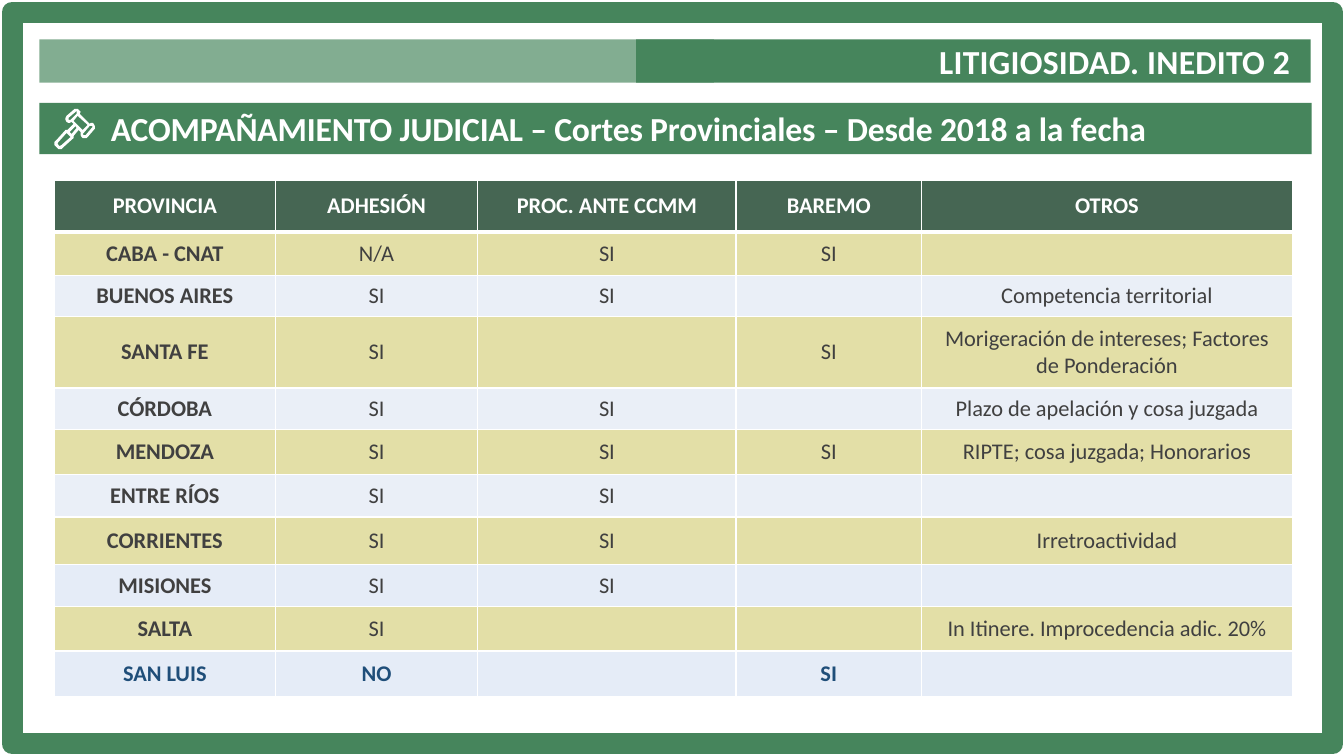
from lxml.etree import SubElement
from pptx import Presentation
from pptx.dml.color import RGBColor
from pptx.enum.shapes import MSO_SHAPE as Preset
from pptx.enum.text import MSO_ANCHOR as Anchor, PP_ALIGN as Align
from pptx.oxml.ns import qn
from pptx.util import Inches, Pt

GREEN = RGBColor(0x46, 0x85, 0x5C)
DARK_GREEN = RGBColor(0x46, 0x66, 0x53)
SAND = RGBColor(0xE3, 0xDF, 0xA7)
ICE = RGBColor(0xEA, 0xEF, 0xF7)
PALE_BLUE = RGBColor(0xE5, 0xEC, 0xF7)
NAVY = RGBColor(0x1F, 0x4E, 0x79)
GRAY = RGBColor(0x40, 0x40, 0x40)
WHITE = RGBColor(0xFF, 0xFF, 0xFF)

presentation = Presentation()
presentation.slide_width, presentation.slide_height = Inches(13.33), Inches(7.5)
slide = presentation.slides.add_slide(presentation.slide_layouts[6])


def add_text(frame, text, size, color, bold=True, align=Align.CENTER, spacing=0):
    paragraph = frame.paragraphs[0]
    paragraph.alignment = align
    run = paragraph.add_run()
    run.text = text
    run.font.name, run.font.size = "Calibri", Pt(size)
    run.font.bold, run.font.color.rgb = bold, color
    if spacing:  # hundredths of a point
        run._r.get_or_add_rPr().set("spc", str(spacing))


def add_bar(left, top, width, height):
    bar = slide.shapes.add_shape(
        Preset.RECTANGLE, Inches(left), Inches(top), Inches(width), Inches(height))
    bar.shadow.inherit = False
    bar.fill.solid()
    bar.fill.fore_color.rgb = GREEN
    bar.line.fill.background()
    frame = bar.text_frame
    frame.word_wrap, frame.vertical_anchor = True, Anchor.MIDDLE
    frame.margin_left = frame.margin_right = frame.margin_top = frame.margin_bottom = 0
    return bar


# Top band: translucent left part, solid right part with the section name
light_bar = add_bar(0.39, 0.39, 6.69, 0.43)
color_element = light_bar.fill._xPr.find(qn("a:solidFill"))[0]
SubElement(color_element, qn("a:alpha"), val="67000")

section_bar = add_bar(6.31, 0.39, 6.69, 0.43)
section_bar.text_frame.margin_right = Inches(0.2)
add_text(section_bar.text_frame, "LITIGIOSIDAD. INEDITO 2", 24, WHITE,
         align=Align.RIGHT, spacing=20)
section_bar.text_frame.paragraphs[0].space_before = Pt(1)

# Frame around the slide
border = add_bar(0.12, 0.12, 13.1, 7.26)
border.fill.background()
border.line.color.rgb = GREEN
border.line.width = Pt(15)

# Title bar
title_bar = add_bar(0.39, 1.02, 12.62, 0.51)
title_bar.text_frame.margin_left = Inches(0.71)
add_text(title_bar.text_frame,
         "ACOMPAÑAMIENTO JUDICIAL – Cortes Provinciales – Desde 2018 a la fecha",
         24, WHITE, align=Align.LEFT, spacing=-10)

# Gavel icon: outer contour, then the openings, in hundredths of an inch
gavel_contours = [
    [(76, 108), (74.5, 108.2), (73, 109), (66, 115), (65.1, 117), (65, 119), (66, 121),
     (67.5, 121.8), (69, 122), (71, 121), (73, 123), (67, 129), (65, 129), (56, 139),
     (54.5, 141), (54.5, 144), (56, 146), (57.5, 147.5), (59, 148), (61, 147.5),
     (63, 146), (73, 137), (73, 135), (78, 129), (80, 131), (80, 134), (81, 136),
     (82.5, 136.8), (84, 137), (85.5, 136.8), (87, 136), (93, 129), (94.5, 127.5),
     (94.5, 125), (93, 123), (91.5, 122.2), (90, 122), (89, 123), (79, 113),
     (79.5, 111), (78, 109), (77, 108.2)],
    [(76, 110), (76.5, 111.5), (76, 113), (70, 119), (69, 119.3), (68, 119),
     (67.7, 118), (68, 117), (75, 111)],
    [(77, 115), (87, 124), (82, 129), (73, 120)],
    [(75, 125), (76, 127), (71, 133), (69, 131)],
    [(90, 125), (91, 125), (91.5, 126), (91, 127), (85, 134), (84, 134.3), (83, 134),
     (82.5, 133), (83, 132), (89, 125.3)],
    [(66, 132), (70, 136), (61, 144), (59, 145), (58, 144), (57, 142.5), (58, 141)],
]
builder = slide.shapes.build_freeform(*gavel_contours[0][0], scale=Inches(0.01))
for number, contour in enumerate(gavel_contours):
    if number:
        builder.move_to(*contour[0])
    builder.add_line_segments(contour[1:], close=True)
gavel = builder.convert_to_shape()
gavel.shadow.inherit = False
gavel.fill.solid()
gavel.fill.fore_color.rgb = WHITE
gavel.line.fill.background()

# Table of provinces
header = ["PROVINCIA", "ADHESIÓN", "PROC. ANTE CCMM", "BAREMO", "OTROS"]
provinces = [
    ["CABA - CNAT", "N/A", "SI", "SI", ""],
    ["BUENOS AIRES", "SI", "SI", "", "Competencia territorial"],
    ["SANTA FE", "SI", "", "SI", "Morigeración de intereses; Factores de Ponderación"],
    ["CÓRDOBA", "SI", "SI", "", "Plazo de apelación y cosa juzgada"],
    ["MENDOZA", "SI", "SI", "SI", "RIPTE; cosa juzgada; Honorarios"],
    ["ENTRE RÍOS", "SI", "SI", "", ""],
    ["CORRIENTES", "SI", "SI", "", "Irretroactividad"],
    ["MISIONES", "SI", "SI", "", ""],
    ["SALTA", "SI", "", "", "In Itinere. Improcedencia adic. 20%"],
    ["SAN LUIS", "NO", "", "SI", ""],
]
rows = [header] + provinces
column_widths = [2.19, 2.01, 2.56, 1.84, 3.68]
row_heights = [0.51, 0.43, 0.41, 0.71, 0.41, 0.45, 0.42, 0.47, 0.42, 0.44, 0.45]
table = slide.shapes.add_table(
    len(rows), len(header), Inches(0.54), Inches(1.79),
    Inches(sum(column_widths)), Inches(sum(row_heights))).table
for column, width in zip(table.columns, column_widths):
    column.width = Inches(width)

for row_number, (row, height) in enumerate(zip(rows, row_heights)):
    table.rows[row_number].height = Inches(height)
    is_header, is_last = row_number == 0, row_number == len(provinces)
    if is_header:
        fill_color, text_color = DARK_GREEN, WHITE
    else:
        even_color = ICE if row_number < 8 else PALE_BLUE
        fill_color = SAND if row_number % 2 else even_color
        text_color = NAVY if is_last else GRAY

    for column_number, text in enumerate(row):
        cell = table.cell(row_number, column_number)
        cell.vertical_anchor = Anchor.MIDDLE

        # White borders, thicker under the header
        thick_side = {0: "lnB", 1: "lnT"}.get(row_number)
        for side in ("lnL", "lnR", "lnT", "lnB"):
            width = Pt(3 if side == thick_side else 1)
            line = SubElement(cell._tc.get_or_add_tcPr(), qn(f"a:{side}"), w=str(width))
            SubElement(SubElement(line, qn("a:solidFill")), qn("a:srgbClr"), val=str(WHITE))

        cell.fill.solid()
        cell.fill.fore_color.rgb = fill_color
        if text:
            add_text(cell.text_frame, text, 16, text_color,
                     bold=is_header or is_last or column_number == 0)

presentation.save("out.pptx")
